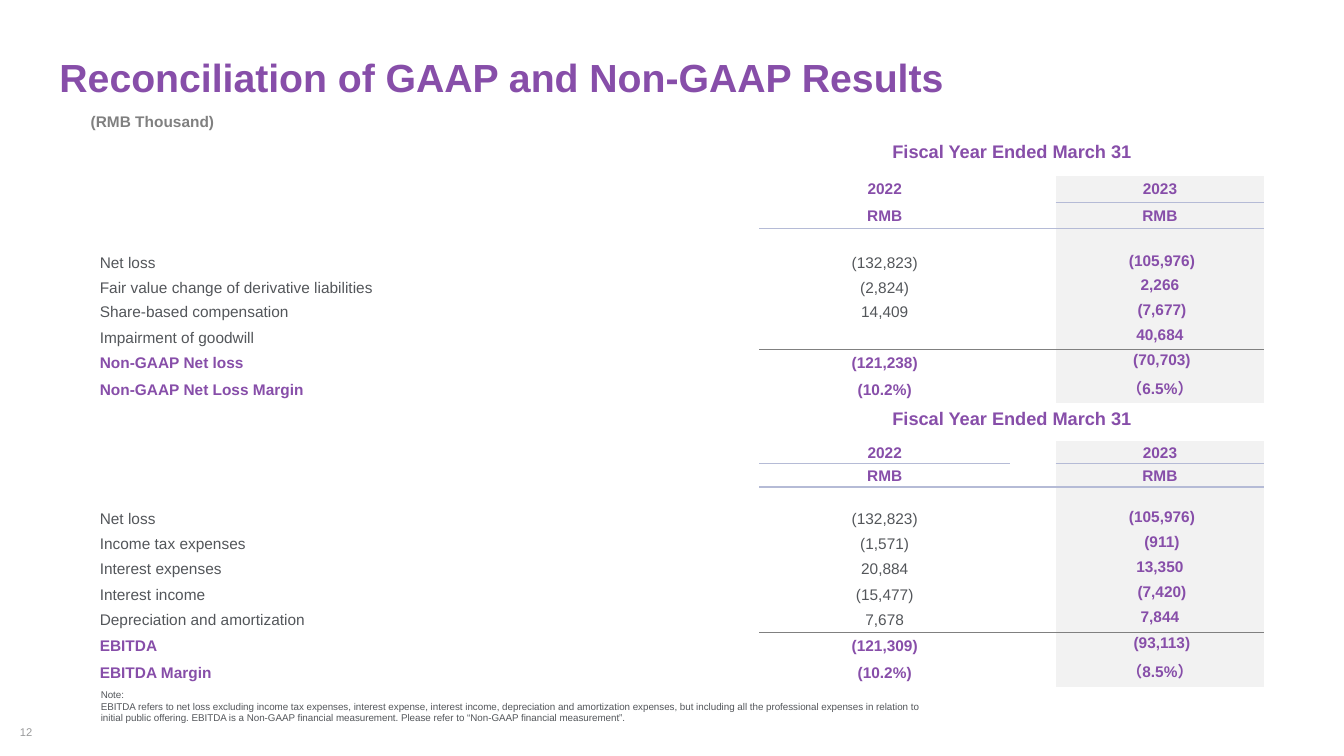
from lxml import etree
from pptx import Presentation
from pptx import util as u
from pptx.dml.color import RGBColor
from pptx.enum import text as t
from pptx.oxml.ns import qn

COLORS = {"purple": "874EA9", "text": "53565A", "gray": "808080", "number": "999A9B",
          "band": "F2F2F2", "header_rule": "B5BBD6"}
HEADING = "Fiscal Year Ended March 31"
LABEL, PRIOR, GAP, CURRENT = 0, 2, 3, 4

deck = Presentation()
deck.slide_width, deck.slide_height = u.Inches(13.33), u.Inches(7.5)
page = deck.slides.add_slide(deck.slide_layouts[6])
GRID = deck.slide_width // 1333  # the slide is 1333 grid columns by 750 grid rows


def write(box, text, size=11, color="purple", bold=True, align="LEFT",
          anchor="TOP", margins=(0, 0, 0, 0)):
    """Fill a text frame or table cell; margins are left, top, right, bottom in grid units."""
    box.margin_left, box.margin_top, box.margin_right, box.margin_bottom = (
        GRID * margin for margin in margins)
    box.vertical_anchor = t.MSO_ANCHOR[anchor]
    frame = getattr(box, "text_frame", box)
    frame.word_wrap = True
    for index, line in enumerate(text.split("\n")):
        para = frame.add_paragraph() if index else frame.paragraphs[0]
        para.alignment = t.PP_ALIGN[align]
        if not line:
            etree.SubElement(para._p, qn("a:endParaRPr"), sz=str(size * 100))
            continue
        span = para.add_run()
        span.text = line
        span.font.name, span.font.size, span.font.bold = "Arial", u.Pt(size), bold
        span.font.color.rgb = RGBColor.from_string(COLORS[color])


def rule_below(cell, color):
    """Draw a one-point line along the bottom edge of a cell."""
    line = etree.Element(qn("a:lnB"), w=str(u.Pt(1)))
    fill = etree.SubElement(line, qn("a:solidFill"))
    etree.SubElement(fill, qn("a:srgbClr"), val=COLORS[color])
    cell._tc.get_or_add_tcPr().insert(0, line)


# Each statement: top, row heights, columns ruled under the year, items (the last two are totals)
statements = [
    (126, [27, 21, 27, 26, 21, 25, 24, 25, 25, 25, 25], [CURRENT], [
        ("Net loss", "(132,823)", "(105,976)"),
        ("Fair value change of derivative liabilities", "(2,824)", "2,266"),
        ("Share-based compensation", "14,409", "(7,677)"),
        ("Impairment of goodwill", "", "40,684"),
        ("Non-GAAP Net loss", "(121,238)", "(70,703)"),
        ("Non-GAAP Net Loss Margin", "(10.2%)", "（6.5%）")]),
    (394, [22, 19, 23, 23, 19, 25, 25, 25, 25, 25, 26, 25, 19], [PRIOR, CURRENT], [
        ("Net loss", "(132,823)", "(105,976)"),
        ("Income tax expenses", "(1,571)", "(911)"),
        ("Interest expenses", "20,884", "13,350"),
        ("Interest income", "(15,477)", "(7,420)"),
        ("Depreciation and amortization", "7,678", "7,844"),
        ("EBITDA", "(121,309)", "(93,113)"),
        ("EBITDA Margin", "(10.2%)", "（8.5%）")]),
]
widths = [630, 33, 249, 45, 207]

for top, heights, year_rules, items in statements:
    table = page.shapes.add_table(
        len(heights), len(widths), GRID * 90, GRID * top,
        GRID * sum(widths), GRID * sum(heights)).table
    table.first_row = table.horz_banding = False
    style = table._tbl.tblPr.find(qn("a:tableStyleId"))
    style.text = "{2D5ABB26-0587-4C30-8999-92F81FD0307C}"
    for column, width in zip(table.columns, widths):
        column.width = GRID * width
    for row, height in zip(table.rows, heights):
        row.height = GRID * height

    contents = {(0, PRIOR): HEADING}
    for column, year in ((PRIOR, "2022"), (CURRENT, "2023")):
        contents[2, column], contents[3, column] = year, "RMB"
    for row, item in enumerate(items, 5):
        contents.update(zip([(row, LABEL), (row, PRIOR), (row, CURRENT)], item))
    end = 5 + len(items)
    total = end - 2

    for row in range(len(heights)):
        for column in range(len(widths)):
            cell = table.cell(row, column)
            value = contents.get((row, column), "")
            strong = row < 5 or row >= total or column == CURRENT
            left, bottom = 1, 0
            if column == LABEL:
                left = 9
            elif column == CURRENT and row >= 5:
                left, bottom = (5 if value.startswith("(") else 1), 5
            size = (13 if row == 0 else 11) if value else 6
            write(cell, value, size=size, bold=strong, color="purple" if strong else "text",
                  align="LEFT" if column == LABEL else "CENTER", anchor="MIDDLE",
                  margins=(left, 1, 1, bottom))
            if column == CURRENT and 2 <= row < end:
                cell.fill.solid()
                cell.fill.fore_color.rgb = RGBColor.from_string(COLORS["band"])
            else:
                cell.fill.background()

    table.cell(0, LABEL).merge(table.cell(1, LABEL))
    table.cell(0, PRIOR).merge(table.cell(1, CURRENT))
    for column in year_rules:
        rule_below(table.cell(2, column), "header_rule")
    for column in (PRIOR, GAP, CURRENT):
        rule_below(table.cell(3, column), "header_rule")
        rule_below(table.cell(total - 1, column), "gray")

note = ("Note:\nEBITDA refers to net loss excluding income tax expenses, interest expense, "
        "interest income, depreciation and amortization expenses, but including all the "
        "professional expenses in relation to initial public offering. EBITDA is a Non-GAAP "
        "financial measurement. Please refer to “Non-GAAP financial measurement”.")
captions = [
    ((59, 53, 1050, 47), "Reconciliation of GAAP and Non-GAAP Results", dict(size=28)),
    ((90, 111, 137, 19), "(RMB Thousand)", dict(color="gray")),
    ((100, 683, 834, 35), note, dict(size=7, color="text", bold=False)),
    ((9, 718, 33, 16), "12", dict(size=8, color="number", bold=False, align="RIGHT",
                                  anchor="MIDDLE", margins=(10, 5, 10, 5))),
]
for place, text, style in captions:
    box = page.shapes.add_textbox(*(GRID * length for length in place))
    write(box.text_frame, text, **style)

deck.save("out.pptx")
